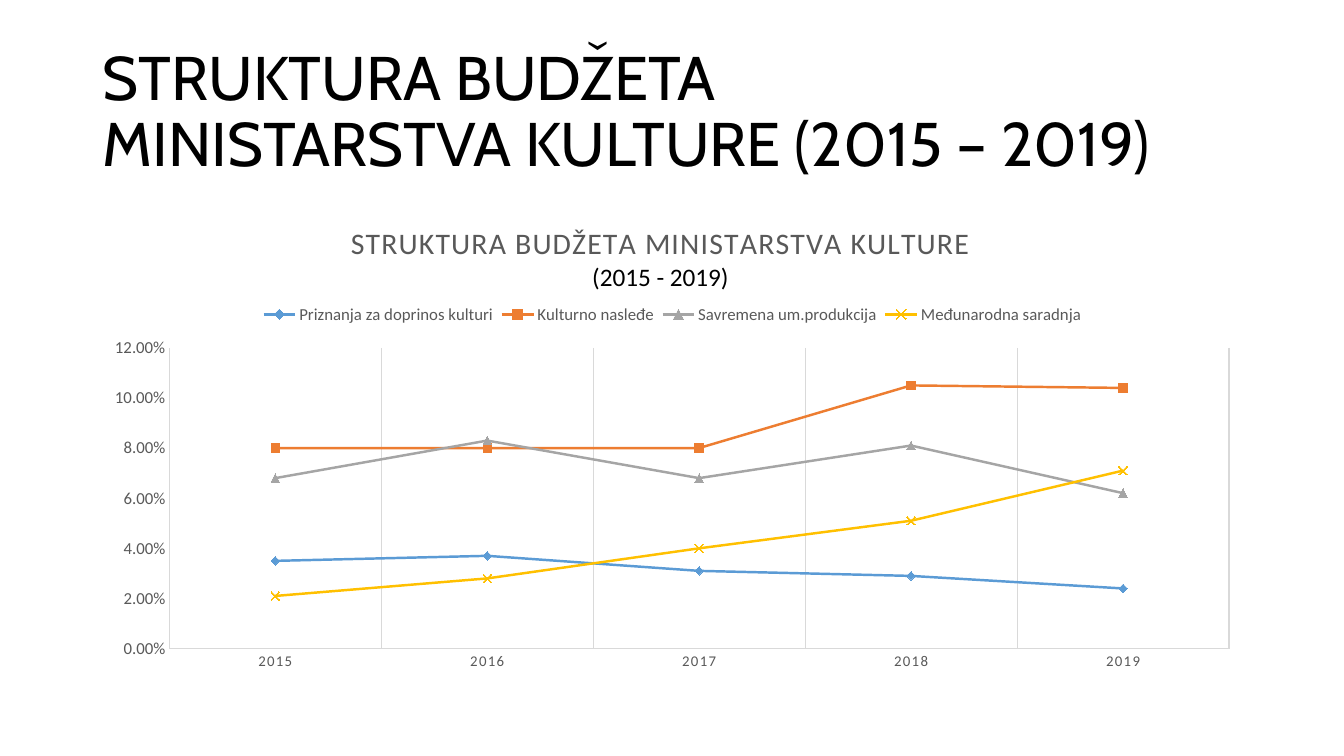
from lxml import etree
from pptx import Presentation
from pptx import util as u
from pptx.chart.data import CategoryChartData
from pptx.dml.color import RGBColor
from pptx.enum import chart as ch, text
from pptx.oxml.ns import qn

BLACK = RGBColor(0x00, 0x00, 0x00)
GREY = RGBColor(0x59, 0x59, 0x59)
RULE = RGBColor(0xD9, 0xD9, 0xD9)
BLUE = RGBColor(0x5B, 0x9B, 0xD5)
ORANGE = RGBColor(0xED, 0x7D, 0x31)
SILVER = RGBColor(0xA5, 0xA5, 0xA5)
YELLOW = RGBColor(0xFF, 0xC0, 0x00)

HEADING = ("STRUKTURA BUDŽETA ", "MINISTARSTVA KULTURE (2015 – 2019)")
CAPTION = (
    ("STRUKTURA BUDŽETA MINISTARSTVA KULTURE", 21.3, GREY, 100),
    ("(2015 - 2019)", 18, BLACK, 0),
)
YEARS = ("2015", "2016", "2017", "2018", "2019")
MARKERS = ch.XL_MARKER_STYLE
BUDGET = (
    ("Priznanja za doprinos kulturi", (0.035, 0.037, 0.031, 0.029, 0.024), BLUE, MARKERS.DIAMOND),
    ("Kulturno nasleđe", (0.08, 0.08, 0.08, 0.105, 0.104), ORANGE, MARKERS.SQUARE),
    ("Savremena um.produkcija", (0.068, 0.083, 0.068, 0.081, 0.062), SILVER, MARKERS.TRIANGLE),
    ("Međunarodna saradnja", (0.021, 0.028, 0.04, 0.051, 0.071), YELLOW, MARKERS.X),
)


def apply(target, values):
    for name, value in values.items():
        setattr(target, name, value)


class BudgetSlide:
    heading_font = "Cabin"
    chart_font = "Calibri"

    def __init__(self, deck):
        self.slide = deck.slides.add_slide(deck.slide_layouts[5])

    def place(self, part, left, top, width, height):
        apply(part, {"left": u.Inches(left), "top": u.Inches(top),
                     "width": u.Inches(width), "height": u.Inches(height)})

    def style(self, font, size, color, name=chart_font):
        apply(font, {"size": u.Pt(size), "name": name, "bold": False})
        font.color.rgb = color

    def rule(self, line, color=RULE, width=0.75):
        line.color.rgb = color
        line.width = u.Pt(width)

    def heading(self, lines):
        title = self.slide.shapes.title
        self.place(title, 0.92, 0.4, 11.5, 1.45)
        frame = title.text_frame
        apply(frame, {"word_wrap": True, "auto_size": text.MSO_AUTO_SIZE.NONE,
                      "vertical_anchor": text.MSO_ANCHOR.MIDDLE})
        paragraph = frame.paragraphs[0]
        apply(paragraph, {"alignment": text.PP_ALIGN.LEFT, "line_spacing": 0.9})
        for index, words in enumerate(lines):
            if index:
                paragraph.add_line_break()
            run = paragraph.add_run()
            run.text = words
            self.style(run.font, 44, BLACK, self.heading_font)

    def layout(self, element, position, inner=False, **fractions):
        for old in element.findall(qn("c:layout")):
            element.remove(old)
        layout = etree.Element(qn("c:layout"))
        manual = etree.SubElement(layout, qn("c:manualLayout"))
        settings = {"layoutTarget": "inner"} if inner else {}
        settings.update({"xMode": "edge", "yMode": "edge"}, **fractions)
        for name, value in settings.items():
            etree.SubElement(manual, qn("c:" + name)).set("val", str(value))
        element.insert(position, layout)

    def caption(self, chart, lines):
        frame = chart.chart_title.text_frame
        for index, (words, size, color, spacing) in enumerate(lines):
            paragraph = frame.add_paragraph() if index else frame.paragraphs[0]
            paragraph.alignment = text.PP_ALIGN.CENTER
            run = paragraph.add_run()
            run.text = words
            self.style(run.font, size, color)
            run._r.get_or_add_rPr().set("spc", str(spacing))
        chart.chart_title.include_in_layout = False
        self.layout(chart.chart_title._element, 1, x=0.22, y=0.04)

    def axes(self, chart):
        years, shares = chart.category_axis, chart.value_axis
        for axis, size in ((years, 10.6), (shares, 12)):
            apply(axis, {"major_tick_mark": ch.XL_TICK_MARK.NONE,
                         "minor_tick_mark": ch.XL_TICK_MARK.NONE})
            self.style(axis.tick_labels.font, size, GREY)
            self.rule(axis.format.line)
        years.has_major_gridlines = True
        self.rule(years.major_gridlines.format.line)
        years._element.find(".//" + qn("a:defRPr")).set("spc", "100")
        apply(shares, {"has_major_gridlines": False, "minimum_scale": 0,
                       "maximum_scale": 0.12, "major_unit": 0.02})
        apply(shares.tick_labels, {"number_format": "0.00%", "number_format_is_linked": False})

    def legend(self, chart):
        chart.has_legend = True
        apply(chart.legend, {"position": ch.XL_LEGEND_POSITION.TOP, "include_in_layout": False})
        self.style(chart.legend.font, 12, GREY)
        self.layout(chart.legend._element, 1, x=0.14, y=0.21, w=0.72, h=0.05)

    def line_chart(self, years, budget, caption):
        data = CategoryChartData(number_format="0.00%")
        data.categories = years
        for name, shares, color, marker in budget:
            data.add_series(name, shares)
        frame = self.slide.shapes.add_chart(
            ch.XL_CHART_TYPE.LINE_MARKERS, u.Inches(0.92), u.Inches(2),
            u.Inches(11.5), u.Inches(4.76), data)
        chart = frame.chart
        self.style(chart.font, 10, BLACK)
        self.caption(chart, caption)
        self.axes(chart)
        self.legend(chart)
        plot = chart.plots[0]
        plot.vary_by_categories = False
        for series, (name, shares, color, marker) in zip(plot.series, budget):
            series.smooth = False
            self.rule(series.format.line, color, 1.75)
            apply(series.marker, {"style": marker, "size": 6})
            self.rule(series.marker.format.line, color)
            fill = series.marker.format.fill
            if marker == MARKERS.X:
                fill.background()
            else:
                fill.solid()
                fill.fore_color.rgb = color
        plot_area = chart._chartSpace.find(".//" + qn("c:plotArea"))
        self.layout(plot_area, 0, inner=True, x=0.066, y=0.305, w=0.914, h=0.627)


def main():
    deck = Presentation()
    apply(deck, {"slide_width": u.Inches(13.33), "slide_height": u.Inches(7.5)})
    page = BudgetSlide(deck)
    page.heading(HEADING)
    page.line_chart(YEARS, BUDGET, CAPTION)
    deck.save("out.pptx")


if __name__ == "__main__":
    main()
